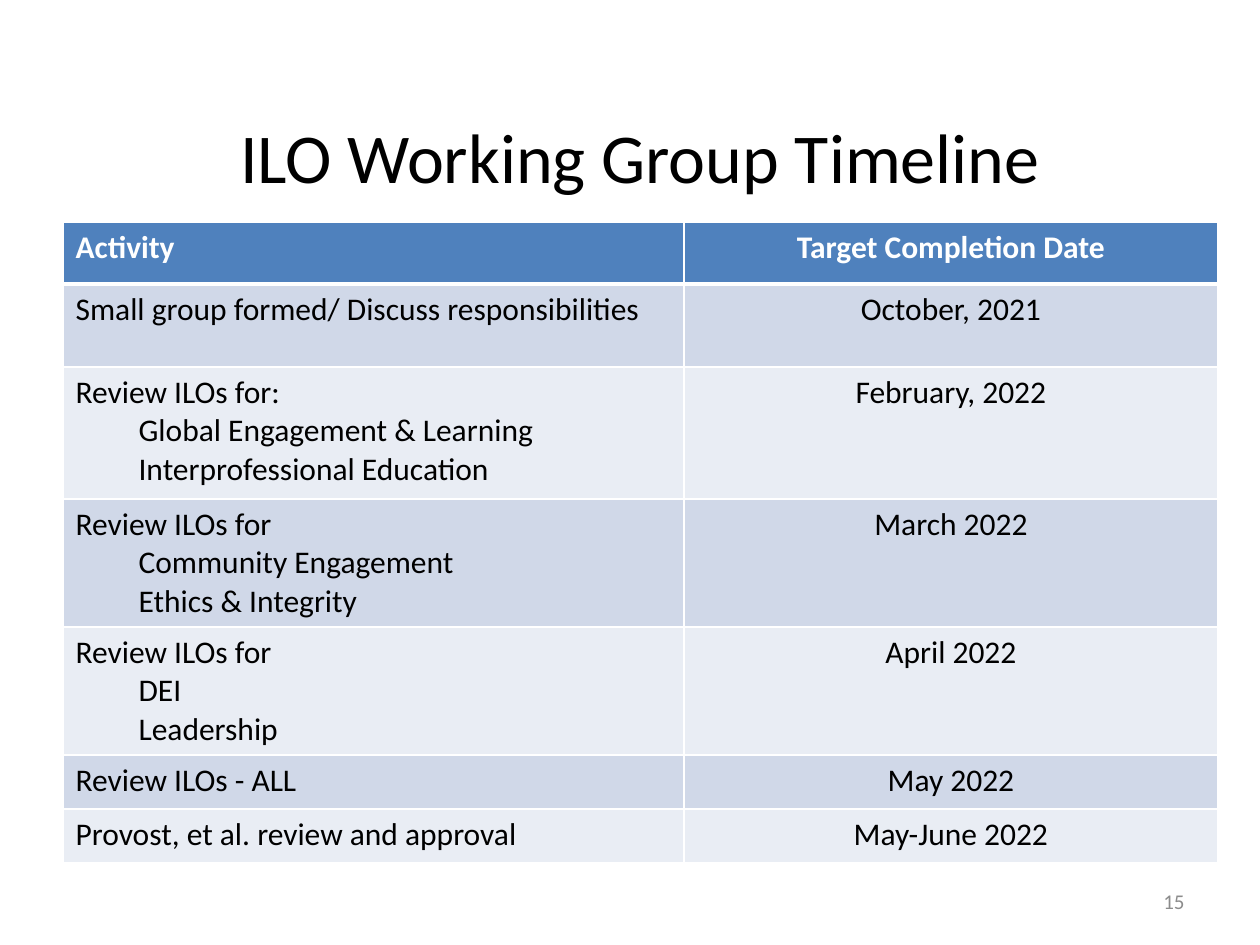
from lxml import etree
from pptx import Presentation
from pptx.dml.color import RGBColor
from pptx.enum.text import MSO_ANCHOR, PP_ALIGN
from pptx.oxml.ns import qn
from pptx.util import Pt

EMU_PER_PX = 914400 // 126
LEFT, CENTER, RIGHT = PP_ALIGN.LEFT, PP_ALIGN.CENTER, PP_ALIGN.RIGHT
MIDDLE = MSO_ANCHOR.MIDDLE

BLACK = RGBColor(0x00, 0x00, 0x00)
WHITE = RGBColor(0xFF, 0xFF, 0xFF)
GRAY = RGBColor(0x8C, 0x8C, 0x8C)
HEADER_BLUE = RGBColor(0x4F, 0x81, 0xBD)
BANDS = (RGBColor(0xD0, 0xD8, 0xE8), RGBColor(0xE9, 0xED, 0xF4))

COLUMN_WIDTHS = (621, 534)
# Row height, activity, indented outcomes, target date
TIMELINE = [
    (62, "Activity", [], "Target Completion Date"),
    (83, "Small group formed/ Discuss responsibilities", [], "October, 2021"),
    (132, "Review ILOs for:",
     ["Global Engagement & Learning", "Interprofessional Education"], "February, 2022"),
    (128, "Review ILOs for", ["Community Engagement", "Ethics & Integrity"], "March 2022"),
    (128, "Review ILOs for", ["DEI", "Leadership"], "April 2022"),
    (54, "Review ILOs - ALL", [], "May 2022"),
    (54, "Provost, et al. review and approval", [], "May-June 2022"),
]


def px(length):
    return length * EMU_PER_PX


class SlideBuilder:
    """Holds the text style and the slide being filled."""

    font_name = "Calibri"
    indent = 63

    def __init__(self, slide):
        self.slide = slide

    def format_paragraph(self, paragraph, size, color, align, bold=False):
        paragraph.alignment = align
        for run in paragraph.runs:
            run.font.name = self.font_name
            run.font.size = Pt(size)
            run.font.bold = bold
            run.font.color.rgb = color

    def text(self, box, text, size, color, align):
        shape = self.slide.shapes.add_textbox(*map(px, box))
        frame = shape.text_frame
        frame.word_wrap = True
        frame.vertical_anchor = MIDDLE
        frame.text = text
        self.format_paragraph(frame.paragraphs[0], size, color, align)

    def borders(self, cell, widths):
        """Draw white borders; widths in points: left, right, top, bottom."""
        properties = cell._tc.get_or_add_tcPr()
        for side, width in zip("LRTB", widths):
            line = etree.SubElement(properties, qn(f"a:ln{side}"), w=str(Pt(width)))
            fill = etree.SubElement(line, qn("a:solidFill"))
            etree.SubElement(fill, qn("a:srgbClr"), val=str(WHITE))

    def cell(self, cell, lines, row, align):
        header = row == 0
        self.borders(cell, (1, 1, 3 if row == 1 else 1, 3 if header else 1))
        cell.fill.solid()
        cell.fill.fore_color.rgb = HEADER_BLUE if header else BANDS[(row - 1) % 2]
        cell.text_frame.text = "\n".join(lines)
        for index, paragraph in enumerate(cell.text_frame.paragraphs):
            if index:
                paragraph.level = 1
                properties = paragraph._p.get_or_add_pPr()
                properties.set("marL", str(px(self.indent)))
                properties.set("indent", "0")
            self.format_paragraph(paragraph, 18, WHITE if header else BLACK, align, header)

    def timeline(self, left, top, widths, rows):
        height = sum(row[0] for row in rows)
        frame = self.slide.shapes.add_table(
            len(rows), len(widths), px(left), px(top), px(sum(widths)), px(height))
        table = frame.table
        for column, width in zip(table.columns, widths):
            column.width = px(width)
        for index, (row_height, activity, outcomes, date) in enumerate(rows):
            table.rows[index].height = px(row_height)
            self.cell(table.cell(index, 0), [activity, *outcomes], index, LEFT)
            self.cell(table.cell(index, 1), [date], index, CENTER)


def main():
    presentation = Presentation()
    presentation.slide_width = px(1260)
    presentation.slide_height = px(945)
    builder = SlideBuilder(presentation.slides.add_slide(presentation.slide_layouts[6]))
    builder.text((73, 77, 1134, 158), "ILO Working Group Timeline", 40, BLACK, CENTER)
    builder.text((903, 876, 294, 50), "15", 12, GRAY, RIGHT)
    builder.timeline(63, 222, COLUMN_WIDTHS, TIMELINE)
    presentation.save("out.pptx")


if __name__ == "__main__":
    main()
